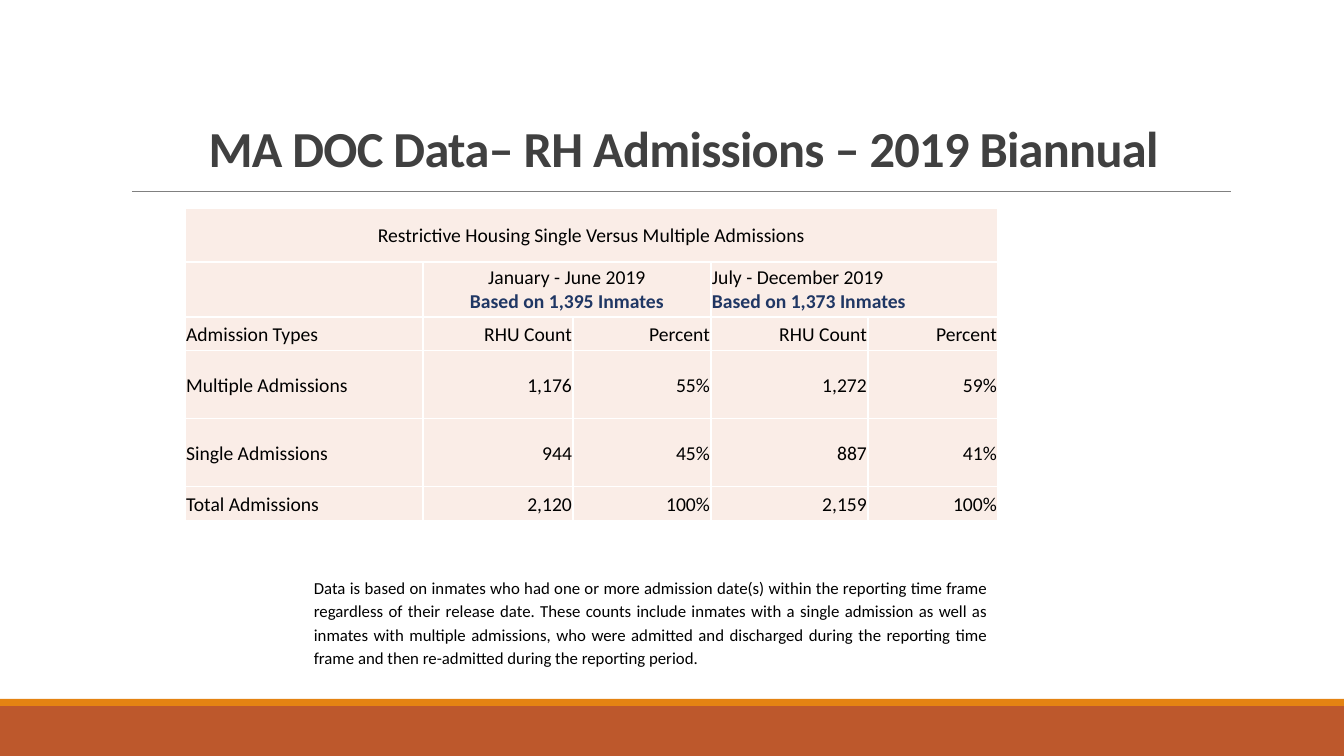
from dataclasses import dataclass

from lxml import etree
from pptx import Presentation
from pptx.dml.color import RGBColor
from pptx.enum.shapes import MSO_CONNECTOR, MSO_SHAPE
from pptx.enum.text import MSO_ANCHOR, MSO_AUTO_SIZE, PP_ALIGN
from pptx.oxml.ns import qn
from pptx.util import Pt

LEFT, CENTER, RIGHT, JUSTIFY = PP_ALIGN.LEFT, PP_ALIGN.CENTER, PP_ALIGN.RIGHT, PP_ALIGN.JUSTIFY
MIDDLE, BOTTOM = MSO_ANCHOR.MIDDLE, MSO_ANCHOR.BOTTOM
NO_AUTOFIT = MSO_AUTO_SIZE.NONE
RECTANGLE, STRAIGHT = MSO_SHAPE.RECTANGLE, MSO_CONNECTOR.STRAIGHT

EMU_PER_PX = 914400 / 100.8
FONT = "Calibri"
BLACK, NAVY, CELL_FILL = "000000", "203764", "FAEDE7"


@dataclass
class Band:
    top: int
    height: int
    color: str


@dataclass
class Cell:
    row: int
    column: int
    lines: list[str]
    align: PP_ALIGN = RIGHT
    span: int = 1


BANDS = [Band(706, 50, "BD582C"), Band(699, 7, "E48312")]
COLUMN_WIDTHS = [238, 150, 138, 157, 130]
ROW_HEIGHTS = [54, 55, 34, 68, 68, 34]
HEADINGS = [
    Cell(0, 0, ["Restrictive Housing Single Versus Multiple Admissions"], CENTER, 5),
    Cell(1, 1, ["January - June 2019", "Based on 1,395 Inmates"], CENTER, 2),
    Cell(1, 3, ["July - December 2019", "Based on 1,373 Inmates"], LEFT, 2),
]
BODY_ROWS = [
    ["Admission Types", "RHU Count", "Percent", "RHU Count", "Percent"],
    ["Multiple Admissions", "1,176", "55%", "1,272", "59%"],
    ["Single Admissions", "944", "45%", "887", "41%"],
    ["Total Admissions", "2,120", "100%", "2,159", "100%"],
]
NOTE = (
    "Data is based on inmates who had one or more admission date(s) within the reporting "
    "time frame regardless of their release date. These counts include inmates with a single "
    "admission as well as inmates with multiple admissions, who were admitted and discharged "
    "during the reporting time frame and then re-admitted during the reporting period."
)


def px(length: int) -> int:
    return round(length * EMU_PER_PX)


def rgb(color: str) -> RGBColor:
    return RGBColor.from_string(color)


def write(paragraph, text: str, size: int, color: str, align: PP_ALIGN, bold: bool = False) -> None:
    paragraph.text = text
    paragraph.alignment = align
    font = paragraph.font
    font.name, font.size, font.bold = FONT, Pt(size), bold
    font.color.rgb = rgb(color)


def add_band(slide, band: Band) -> None:
    shape = slide.shapes.add_shape(RECTANGLE, 0, px(band.top), px(1344), px(band.height))
    shape.shadow.inherit = False
    shape.fill.solid()
    shape.fill.fore_color.rgb = rgb(band.color)
    shape.line.fill.background()


def add_title_rule(slide) -> None:
    rule = slide.shapes.add_connector(STRAIGHT, px(132), px(191), px(1231), px(191))
    rule.line.color.rgb = rgb("808080")
    rule.line.width = Pt(0.5)
    etree.SubElement(rule._element.spPr, qn("a:effectLst"))


def format_title(title) -> None:
    title.left, title.top, title.width, title.height = px(129), px(23), px(1109), px(160)
    frame = title.text_frame
    frame.auto_size = NO_AUTOFIT
    frame.vertical_anchor = BOTTOM
    paragraph = frame.paragraphs[0]
    write(paragraph, "MA DOC Data– RH Admissions – 2019 Biannual", 36, "404040", CENTER, True)
    paragraph.line_spacing = 0.85
    paragraph.runs[0].font._element.set("spc", "-50")


def style_cell(cell) -> None:
    properties = cell._tc.get_or_add_tcPr()
    for side in ("a:lnL", "a:lnR", "a:lnT", "a:lnB"):
        border = etree.SubElement(properties, qn(side), w=str(Pt(1)))
        fill = etree.SubElement(border, qn("a:solidFill"))
        etree.SubElement(fill, qn("a:srgbClr"), val="FFFFFF")
    cell.fill.solid()
    cell.fill.fore_color.rgb = rgb(CELL_FILL)
    cell.margin_left = cell.margin_right = cell.margin_top = px(1)
    cell.margin_bottom = 0
    cell.vertical_anchor = MIDDLE


def fill_cell(table, content: Cell) -> None:
    cell = table.cell(content.row, content.column)
    if content.span > 1:
        cell.merge(table.cell(content.row, content.column + content.span - 1))
    frame = cell.text_frame
    for index, line in enumerate(content.lines):
        paragraph = frame.add_paragraph() if index else frame.paragraphs[0]
        write(paragraph, line, 14, NAVY if index else BLACK, content.align, index > 0)


def add_admissions_table(slide) -> None:
    table = slide.shapes.add_table(
        len(ROW_HEIGHTS), len(COLUMN_WIDTHS), px(185), px(208),
        px(sum(COLUMN_WIDTHS)), px(sum(ROW_HEIGHTS)),
    ).table
    table.first_row = table.horz_banding = False
    for column, width in zip(table.columns, COLUMN_WIDTHS):
        column.width = px(width)
    for row, height in zip(table.rows, ROW_HEIGHTS):
        row.height = px(height)
    for cell in table.iter_cells():
        style_cell(cell)
    for heading in HEADINGS:
        fill_cell(table, heading)
    for row_index, values in enumerate(BODY_ROWS, start=2):
        for column_index, value in enumerate(values):
            align = RIGHT if column_index else LEFT
            fill_cell(table, Cell(row_index, column_index, [value], align))


def add_note(slide) -> None:
    frame = slide.shapes.add_textbox(px(304), px(570), px(694), px(103)).text_frame
    frame.word_wrap = True
    paragraph = frame.paragraphs[0]
    write(paragraph, NOTE, 12, BLACK, JUSTIFY)
    paragraph.line_spacing = 1.15


def main() -> None:
    presentation = Presentation()
    presentation.slide_width, presentation.slide_height = px(1344), px(756)
    slide = presentation.slides.add_slide(presentation.slide_layouts[5])

    # Footer bands and title
    for band in BANDS:
        add_band(slide, band)
    add_title_rule(slide)
    format_title(slide.shapes.title)

    # Admissions table and its note
    add_admissions_table(slide)
    add_note(slide)
    presentation.save("out.pptx")


if __name__ == "__main__":
    main()
